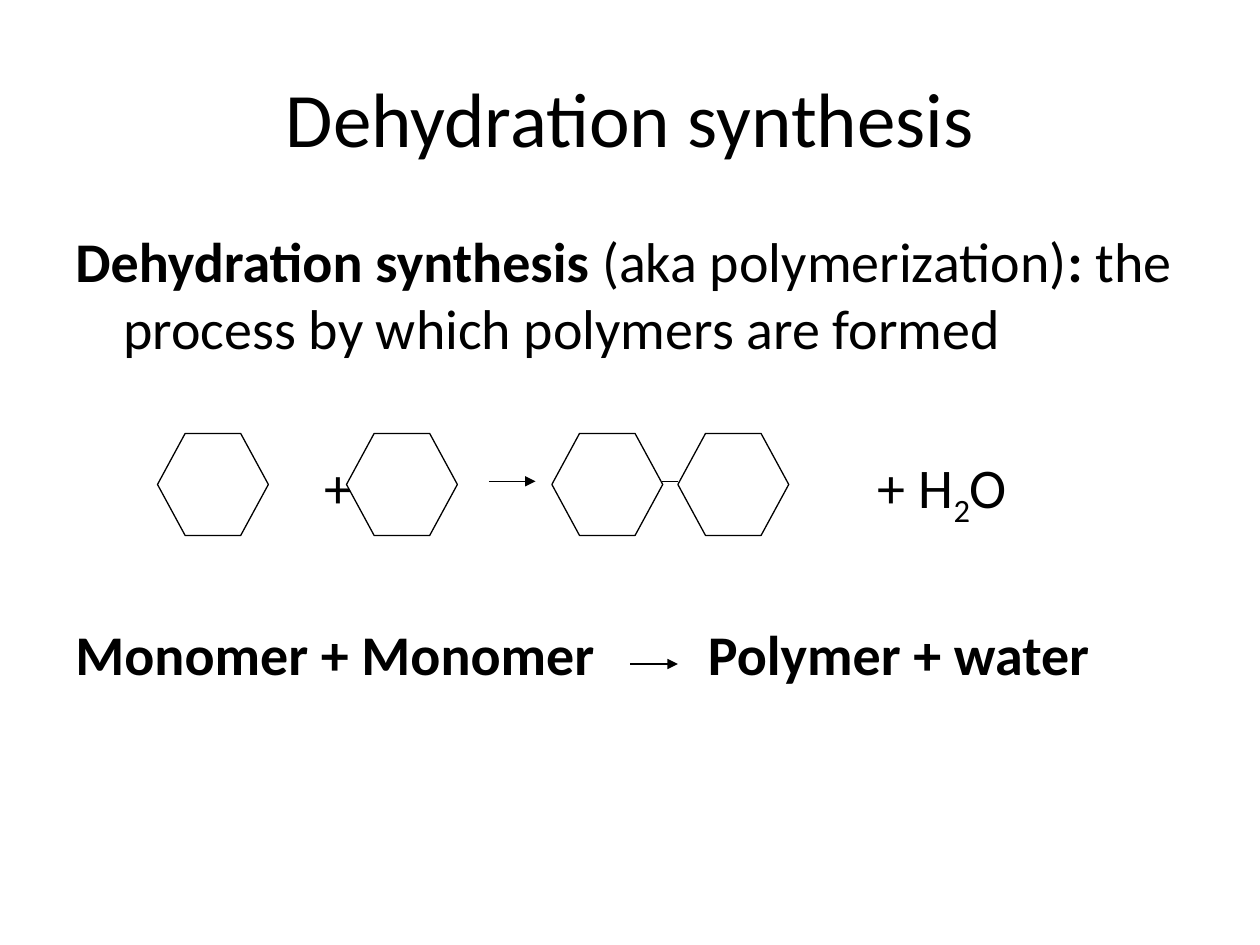
import pptx
import pptx.util
import pptx.dml.color
import pptx.enum.shapes
import pptx.enum.text
import pptx.oxml.ns
import lxml.etree

Inches = pptx.util.Inches
Pt = pptx.util.Pt
BLACK, WHITE = "000000", "FFFFFF"
HEXAGON_TOP, HEXAGON_WIDTH, HEXAGON_HEIGHT = 3.44, 0.88, 0.81
SYMBOLS_TOP, WORDS_TOP = 3.54, 4.87


def color(hex_code):
    return pptx.dml.color.RGBColor.from_string(hex_code)


def add_xml(parent, tag, **attributes):
    element = lxml.etree.SubElement(parent, pptx.oxml.ns.qn(tag))
    for name, value in attributes.items():
        element.set(name, value)


def format_run(run, size, bold=False):
    run.font.name = "Calibri"
    run.font.size = Pt(size)
    run.font.bold = bold
    run.font.color.rgb = color(BLACK)


def add_title(slide, text):
    title = slide.shapes.title
    title.left, title.top = Inches(0.5), Inches(0.3)
    title.width, title.height = Inches(9), Inches(1.25)
    title.text_frame.text = text
    title.text_frame.vertical_anchor = pptx.enum.text.MSO_ANCHOR.MIDDLE
    paragraph = title.text_frame.paragraphs[0]
    paragraph.alignment = pptx.enum.text.PP_ALIGN.CENTER
    format_run(paragraph.runs[0], 44)


def add_text(slide, left, top, width, height, pieces, hanging=0):
    """Add one paragraph of (text, bold) pieces and return it."""
    frame = slide.shapes.add_textbox(
        Inches(left), Inches(top), Inches(width), Inches(height)).text_frame
    frame.word_wrap = True
    paragraph = frame.paragraphs[0]
    properties = paragraph._p.get_or_add_pPr()
    properties.set("marL", str(Inches(hanging)))
    properties.set("indent", str(Inches(-hanging)))
    for text, bold in pieces:
        run = paragraph.add_run()
        run.text = text
        format_run(run, 32, bold)
    return paragraph


def add_hexagon(slide, left):
    hexagon = slide.shapes.add_shape(
        pptx.enum.shapes.MSO_SHAPE.HEXAGON, Inches(left), Inches(HEXAGON_TOP),
        Inches(HEXAGON_WIDTH), Inches(HEXAGON_HEIGHT))
    hexagon.adjustments[0] = 0.271
    hexagon.shadow.inherit = False
    hexagon.fill.solid()
    hexagon.fill.fore_color.rgb = color(WHITE)
    hexagon.line.color.rgb = color(BLACK)
    hexagon.line.width = Pt(0.75)


def add_line(slide, start, end, y, arrow=False):
    line = slide.shapes.add_connector(
        pptx.enum.shapes.MSO_CONNECTOR.STRAIGHT,
        Inches(start), Inches(y), Inches(end), Inches(y))
    line.line.color.rgb = color(BLACK)
    line.line.width = Pt(0.75)
    if arrow:
        add_xml(line.line._get_or_add_ln(), "a:tailEnd", type="triangle")
    add_xml(line._element.spPr, "a:effectLst")


def main():
    presentation = pptx.Presentation()
    presentation.slide_width = Inches(10)
    presentation.slide_height = Inches(7.5)
    slide = presentation.slides.add_slide(presentation.slide_layouts[5])

    # Title and definition
    add_title(slide, "Dehydration synthesis")
    add_text(slide, 0.5, 1.75, 9, 1.2, [
        ("Dehydration synthesis ", True), ("(aka polymerization)", False),
        (": ", True), ("the process by which polymers are formed", False),
    ], hanging=0.38)

    # Symbols of the equation
    add_text(slide, 2.48, SYMBOLS_TOP, 0.6, 0.65, [("+", False)])
    water = add_text(slide, 6.87, SYMBOLS_TOP, 2, 0.65,
                     [("+ H", False), ("2", False), ("O", False)])
    water.runs[1].font._element.set("baseline", "-25000")

    # Equation in words
    add_text(slide, 0.5, WORDS_TOP, 4.5, 0.65, [("Monomer + Monomer", True)])
    add_text(slide, 5.52, WORDS_TOP, 3.9, 0.65, [("Polymer + water", True)])

    # Two monomers, then the polymer they form
    for left in (1.25, 2.75, 5.38, 4.38):
        add_hexagon(slide, left)
    add_line(slide, 5.25, 5.38, 3.82)

    # Reaction arrows
    add_line(slide, 3.88, 4.25, 3.82, arrow=True)
    add_line(slide, 5, 5.38, 5.27, arrow=True)

    presentation.save("out.pptx")


if __name__ == "__main__":
    main()
